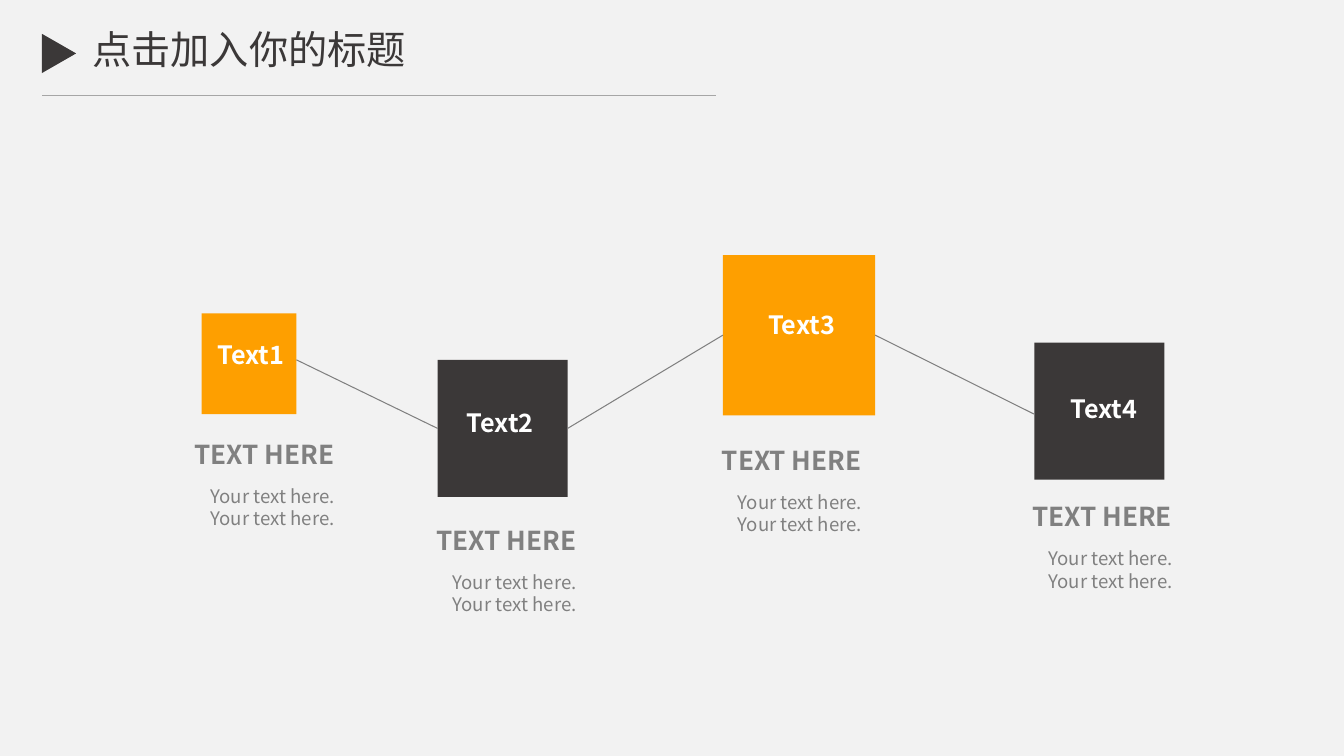
from dataclasses import dataclass
from typing import Any, NamedTuple, Optional

from lxml import etree
from pptx import Presentation
from pptx.dml.color import RGBColor
from pptx.enum.shapes import MSO_CONNECTOR, MSO_SHAPE
from pptx.enum.text import MSO_ANCHOR, PP_ALIGN
from pptx.oxml.ns import qn
from pptx.util import Inches, Pt

RECT, TRIANGLE = MSO_SHAPE.RECTANGLE, MSO_SHAPE.ISOSCELES_TRIANGLE
STRAIGHT = MSO_CONNECTOR.STRAIGHT
LEFT, CENTER, TOP = PP_ALIGN.LEFT, PP_ALIGN.CENTER, MSO_ANCHOR.TOP
LEFT_SIDE, RIGHT_SIDE = 1, 3
TITLE_ONLY = 5


class TextStyle(NamedTuple):
    size: float
    color: str
    bold: bool
    align: Any
    spacing: Any
    margins: tuple[float, float] = (0.1, 0.05)
    wrap: bool = True


@dataclass(frozen=True)
class Theme:
    font: str = "Noto Sans CJK SC"
    background: str = "F2F2F2"
    dark: str = "3B3838"
    accent: str = "FE9F00"
    grey: str = "808080"
    rule: str = "A6A6A6"
    title: TextStyle = TextStyle(28, "3B3838", False, CENTER, 0.9, (0, 0))
    label: TextStyle = TextStyle(18, "FFFFFF", True, CENTER, Pt(22.5), wrap=False)
    heading: TextStyle = TextStyle(18.6, "808080", True, LEFT, Pt(23))
    detail: TextStyle = TextStyle(13.3, "808080", False, LEFT, Pt(16))


THEME = Theme()


class Box(NamedTuple):
    left: float
    top: float
    width: float
    height: float


class Step(NamedTuple):
    label: str
    square: Box
    color: str
    label_at: tuple[float, float]
    heading_at: tuple[float, float]


class Link(NamedTuple):
    """A line between two points; a step index joins that end to its square."""
    start: tuple[float, float]
    end: tuple[float, float]
    from_step: Optional[int] = None
    to_step: Optional[int] = None


STEPS = [
    Step("Text1", Box(2, 3.11, 0.94, 1), THEME.accent, (1.93, 3.3), (1.83, 4.29)),
    Step("Text2", Box(4.34, 3.57, 1.29, 1.36), THEME.dark, (4.4, 3.98), (4.23, 5.14)),
    Step("Text3", Box(7.17, 2.53, 1.51, 1.59), THEME.accent, (7.39, 3.01), (7.06, 4.35)),
    Step("Text4", Box(10.26, 3.4, 1.29, 1.36), THEME.dark, (10.39, 3.84), (10.14, 4.91)),
]
LINKS = [
    Link((2.94, 3.57), (4.34, 4.25), to_step=1),
    Link((5.63, 4.25), (7.17, 3.32), from_step=1, to_step=2),
    Link((8.68, 3.32), (10.26, 4.11), from_step=2),
]
DETAIL_SHIFT = (0.16, 0.47)


def rgb(color: str) -> RGBColor:
    return RGBColor.from_string(color)


def inches(values: tuple) -> list:
    return [Inches(v) for v in values]


def set_all(obj: Any, values: dict) -> None:
    for name, value in values.items():
        setattr(obj, name, value)


def write(sp: Any, lines: list[str], style: TextStyle) -> None:
    tf = sp.text_frame
    side, edge = inches(style.margins)
    set_all(tf, {"word_wrap": style.wrap, "vertical_anchor": TOP,
                 "margin_left": side, "margin_right": side,
                 "margin_top": edge, "margin_bottom": edge})
    for i, line in enumerate(lines):
        p = tf.add_paragraph() if i else tf.paragraphs[0]
        set_all(p, {"alignment": style.align, "line_spacing": style.spacing})
        r = p.add_run()
        r.text = line
        r.font.color.rgb = rgb(style.color)
        set_all(r.font, {"size": Pt(style.size), "bold": style.bold, "name": THEME.font})
        etree.SubElement(r.font._element, qn("a:ea"), typeface=THEME.font)


def add_text(shapes: Any, box: Box, lines: list[str], style: TextStyle) -> None:
    write(shapes.add_textbox(*inches(box)), lines, style)


def add_solid(shapes: Any, kind: Any, box: Box, color: str) -> Any:
    sp = shapes.add_shape(kind, *inches(box))
    sp.shadow.inherit = False
    sp.fill.solid()
    sp.fill.fore_color.rgb = rgb(color)
    sp.line.fill.background()
    return sp


def add_line(shapes: Any, start: tuple, end: tuple, color: str, width: float) -> Any:
    line = shapes.add_connector(STRAIGHT, *inches(start + end))
    line.line.color.rgb = rgb(color)
    line.line.width = Pt(width)
    etree.SubElement(line._element.spPr, qn("a:effectLst"))
    return line


def add_header(shapes: Any) -> None:
    title = shapes.title
    set_all(title, dict(zip(Box._fields, inches(Box(0.59, 0.3, 3.76, 0.47)))))
    write(title, ["点击加入你的标题"], THEME.title)
    add_solid(shapes, TRIANGLE, Box(0.39, 0.36, 0.39, 0.34), THEME.dark).rotation = 90
    add_line(shapes, (0.42, 0.95), (7.1, 0.95), THEME.rule, 0.5)


def add_step(shapes: Any, step: Step) -> Any:
    square = add_solid(shapes, RECT, step.square, step.color)
    add_text(shapes, Box(*step.label_at, 1.12, 0.5), [step.label], THEME.label)
    x, y = step.heading_at
    dx, dy = DETAIL_SHIFT
    add_text(shapes, Box(x, y, 2.41, 0.42), ["TEXT HERE"], THEME.heading)
    add_text(shapes, Box(x + dx, y + dy, 2.41, 0.55), ["Your text here."] * 2, THEME.detail)
    return square


def add_link(shapes: Any, link: Link, squares: list) -> None:
    line = add_line(shapes, link.start, link.end, THEME.grey, 0.75)
    if link.from_step is not None:
        line.begin_connect(squares[link.from_step], RIGHT_SIDE)
    if link.to_step is not None:
        line.end_connect(squares[link.to_step], LEFT_SIDE)


def main() -> None:
    prs = Presentation()
    set_all(prs, {"slide_width": Inches(13.33), "slide_height": Inches(7.5)})
    s = prs.slides.add_slide(prs.slide_layouts[TITLE_ONLY])
    s.background.fill.solid()
    s.background.fill.fore_color.rgb = rgb(THEME.background)
    add_header(s.shapes)
    squares = [add_step(s.shapes, step) for step in STEPS]
    for link in LINKS:
        add_link(s.shapes, link, squares)
    prs.save("out.pptx")


if __name__ == "__main__":
    main()
